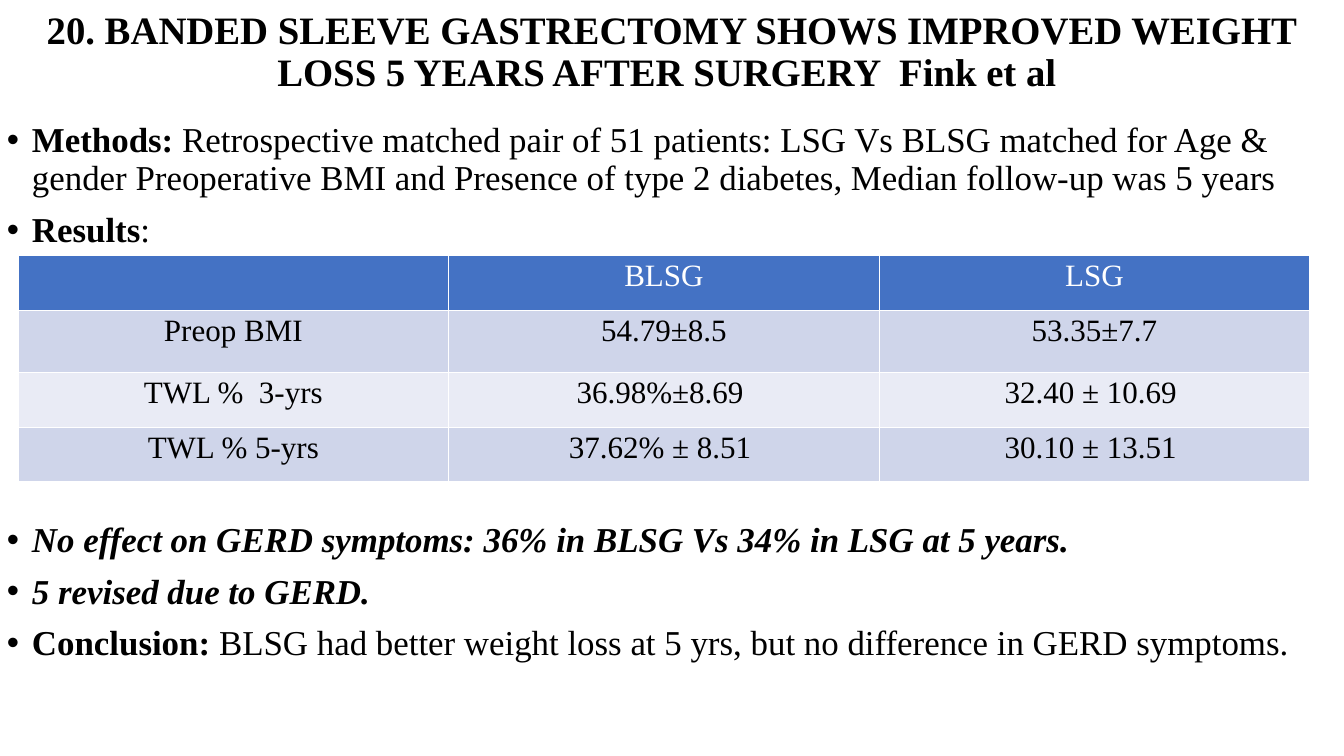
import dataclasses
import typing

import pptx
import pptx.dml.color
import pptx.enum.text
import pptx.oxml.ns
import pptx.util
from lxml import etree

Align = pptx.enum.text.PP_ALIGN
Anchor = pptx.enum.text.MSO_ANCHOR


@dataclasses.dataclass(frozen=True)
class Theme:
    font: str = "Times New Roman"
    ink: str = "000000"
    paper: str = "FFFFFF"
    header: str = "4472C4"
    bands: tuple[str, str] = ("CFD5EA", "E9EBF5")
    title_size: float = 40
    body_size: float = 36
    table_size: float = 32


class Box(typing.NamedTuple):
    """Left, top, width and height in percent of the slide."""
    left: float
    top: float
    width: float
    height: float


class Words(typing.NamedTuple):
    text: str
    bold: bool = False
    italic: bool = False


@dataclasses.dataclass(frozen=True)
class Bullet:
    words: tuple[Words, ...]
    space_before: float = 14.4


THEME = Theme()
WIDTH = pptx.util.Inches(19.26)
HEIGHT = pptx.util.Inches(10.83)
HANGING = pptx.util.Inches(0.36)

TITLE_BOX = Box(1.35, 1.2, 97.25, 11.63)
BODY_BOX = Box(0, 15.79, 100, 83.01)
TABLE_BOX = Box(1.35, 33.8, 96.11, 29.91)
ROW_HEIGHTS = (7.2, 8.31, 7.2, 7.2)
TABLE_GAP = 281  # points kept free for the table between two bullets

TITLE = Words("20. BANDED SLEEVE GASTRECTOMY SHOWS IMPROVED WEIGHT LOSS "
              "5 YEARS AFTER SURGERY  Fink et al ", bold=True)
BULLETS = (
    Bullet((Words("Methods: ", bold=True),
            Words("Retrospective matched pair of 51 patients: LSG Vs BLSG matched "
                  "for Age & gender Preoperative BMI and Presence of type 2 diabetes, "
                  "Median follow-up was 5 years"))),
    Bullet((Words("Results", bold=True), Words(":"))),
    Bullet((Words("No effect on GERD symptoms: 36% in BLSG Vs 34% in LSG at 5 years.",
                  bold=True, italic=True),), TABLE_GAP),
    Bullet((Words("5 revised due to GERD.", bold=True, italic=True),)),
    Bullet((Words("Conclusion: ", bold=True),
            Words("BLSG had better weight loss at 5 yrs, "
                  "but no difference in GERD symptoms."))),
)
RESULTS = (
    ("", "BLSG", "LSG"),
    ("Preop BMI", "54.79±8.5", "53.35±7.7"),
    ("TWL %  3-yrs", "36.98%±8.69 ", "32.40 ± 10.69 "),
    ("TWL % 5-yrs", "37.62% ± 8.51 ", "30.10 ± 13.51 "),
)


def across(share: float) -> int:
    return round(WIDTH * share / 100)


def down(share: float) -> int:
    return round(HEIGHT * share / 100)


def place(box: Box) -> tuple[int, int, int, int]:
    return across(box.left), down(box.top), across(box.width), down(box.height)


def set_format(target: typing.Any, values: dict[str, typing.Any]) -> None:
    for name, value in values.items():
        setattr(target, name, value)


def add_words(paragraph: typing.Any, words: Words, size: float, color: str) -> None:
    run = paragraph.add_run()
    run.text = words.text
    set_format(run.font, {"name": THEME.font, "size": pptx.util.Pt(size),
                          "bold": words.bold, "italic": words.italic})
    run.font.color.rgb = pptx.dml.color.RGBColor.from_string(color)


def add_frame(slide: typing.Any, box: Box, anchor: typing.Any) -> typing.Any:
    frame = slide.shapes.add_textbox(*place(box)).text_frame
    set_format(frame, {"word_wrap": True, "vertical_anchor": anchor,
                       "auto_size": pptx.enum.text.MSO_AUTO_SIZE.NONE})
    return frame


def add_bullet_mark(paragraph: typing.Any) -> None:
    properties = paragraph._p.get_or_add_pPr()
    properties.set("marL", str(HANGING))
    properties.set("indent", str(-HANGING))
    for tag, name, value in (("a:buFont", "typeface", "Arial"), ("a:buChar", "char", "•")):
        etree.SubElement(properties, pptx.oxml.ns.qn(tag)).set(name, value)


def add_title(slide: typing.Any) -> None:
    paragraph = add_frame(slide, TITLE_BOX, Anchor.MIDDLE).paragraphs[0]
    set_format(paragraph, {"alignment": Align.CENTER, "line_spacing": 0.9})
    add_words(paragraph, TITLE, THEME.title_size, THEME.ink)


def add_bullets(slide: typing.Any) -> None:
    frame = add_frame(slide, BODY_BOX, Anchor.TOP)
    for index, bullet in enumerate(BULLETS):
        paragraph = frame.add_paragraph() if index else frame.paragraphs[0]
        set_format(paragraph, {"alignment": Align.LEFT, "line_spacing": 0.9,
                               "space_before": pptx.util.Pt(bullet.space_before)})
        add_bullet_mark(paragraph)
        for words in bullet.words:
            add_words(paragraph, words, THEME.body_size, THEME.ink)


def add_results(slide: typing.Any) -> None:
    # The default table style supplies the white cell borders
    table = slide.shapes.add_table(len(RESULTS), len(RESULTS[0]), *place(TABLE_BOX)).table
    for row_index, (texts, height) in enumerate(zip(RESULTS, ROW_HEIGHTS)):
        table.rows[row_index].height = down(height)
        is_header = row_index == 0
        fill = THEME.header if is_header else THEME.bands[(row_index - 1) % 2]
        for column_index, text in enumerate(texts):
            cell = table.cell(row_index, column_index)
            cell.fill.solid()
            cell.fill.fore_color.rgb = pptx.dml.color.RGBColor.from_string(fill)
            paragraph = cell.text_frame.paragraphs[0]
            paragraph.alignment = Align.CENTER
            if text:
                add_words(paragraph, Words(text), THEME.table_size,
                          THEME.paper if is_header else THEME.ink)


def main() -> None:
    presentation = pptx.Presentation()
    set_format(presentation, {"slide_width": WIDTH, "slide_height": HEIGHT})
    slide = presentation.slides.add_slide(presentation.slide_layouts[6])
    # Heading, findings, then the table over the gap in the findings
    add_title(slide)
    add_bullets(slide)
    add_results(slide)
    presentation.save("out.pptx")


if __name__ == "__main__":
    main()
